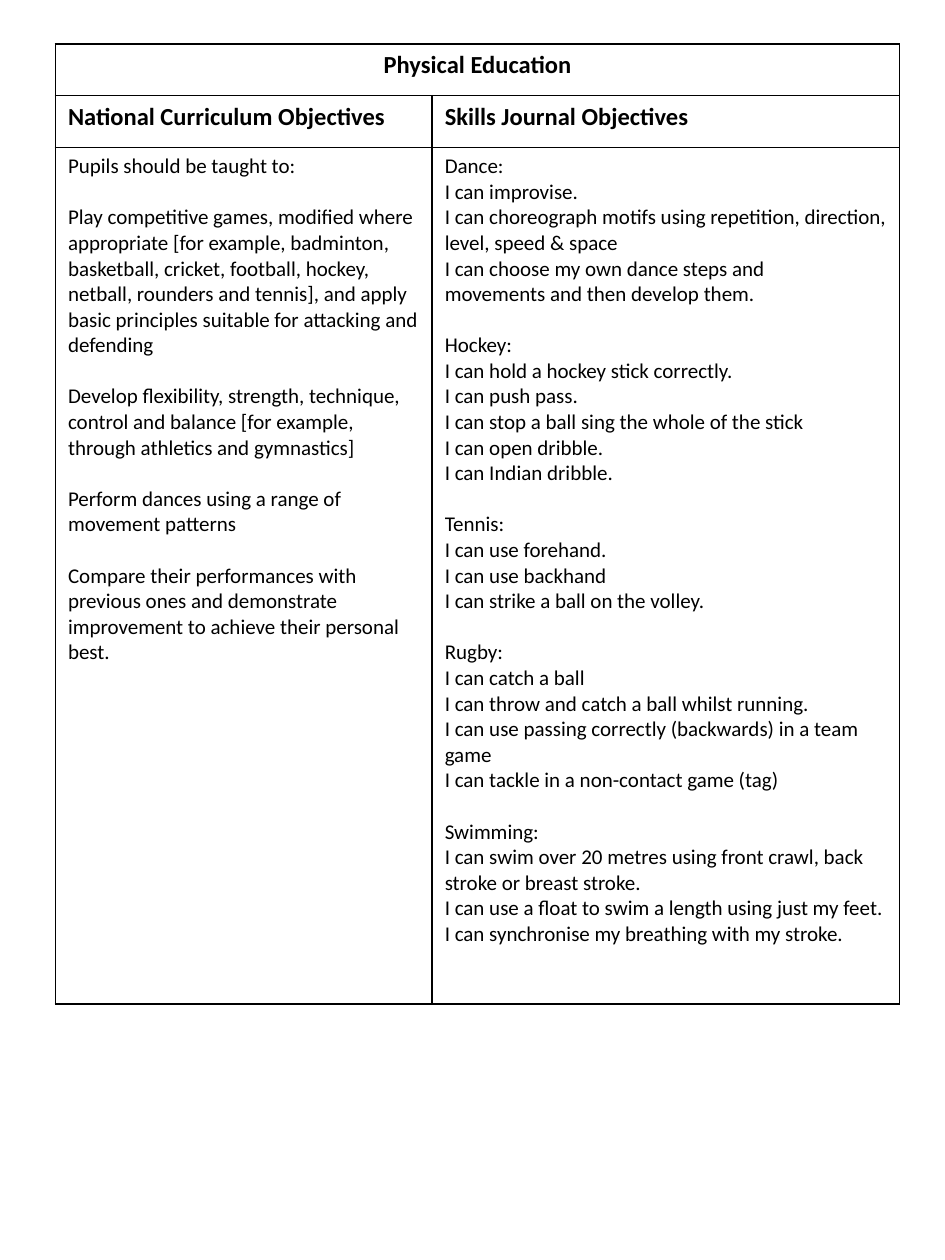
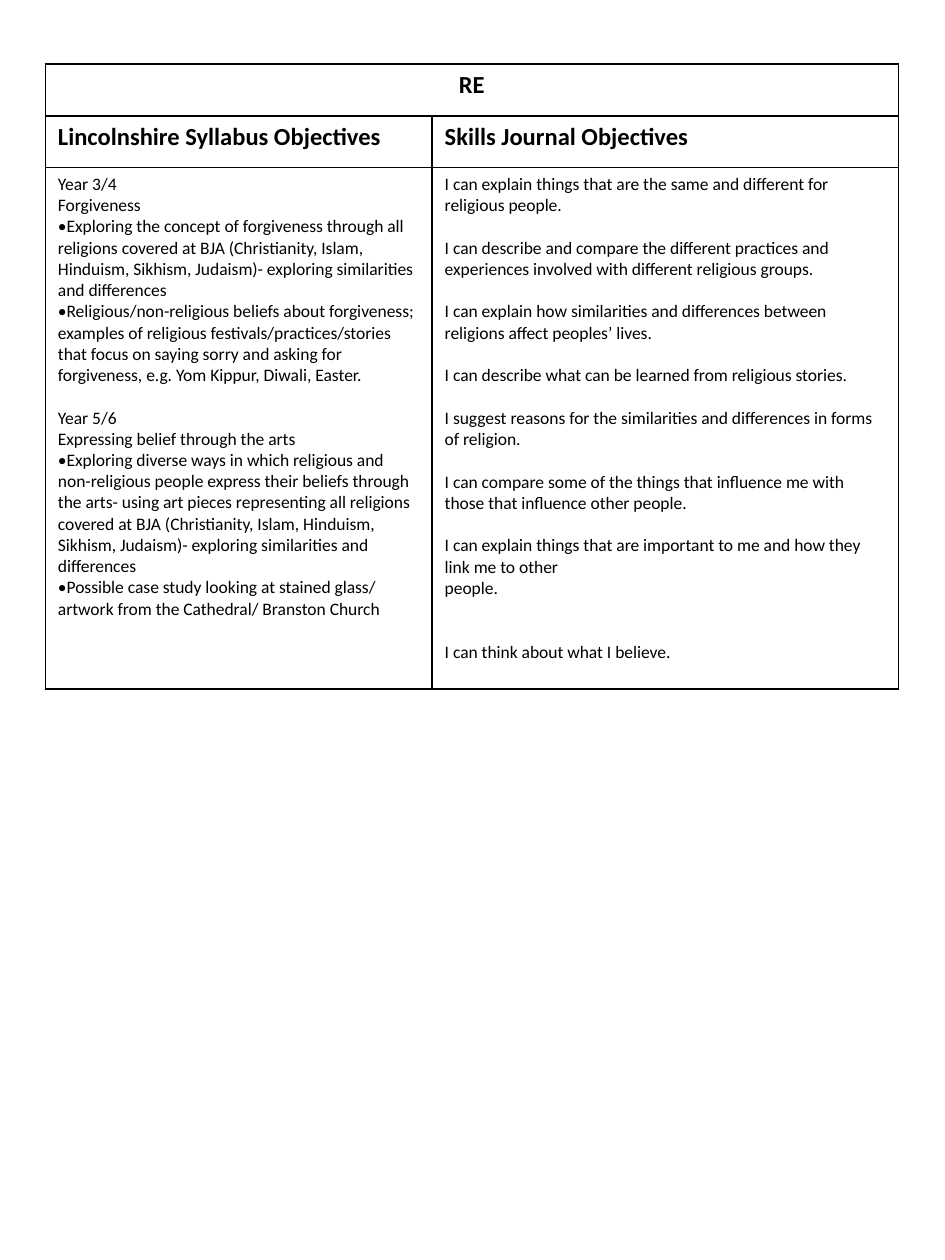
"""Build two curriculum objective tables, one subject per slide."""
from dataclasses import dataclass

import lxml.etree
import pptx
import pptx.dml.color
import pptx.enum.text
import pptx.oxml.ns
import pptx.presentation
import pptx.table
import pptx.text.text
import pptx.util
from pptx.util import Inches

BLACK = pptx.dml.color.RGBColor(0x00, 0x00, 0x00)
WHITE = pptx.dml.color.RGBColor(0xFF, 0xFF, 0xFF)
FONT_NAME = "Calibri"
HEADING_SIZE = 14
LINE_HEIGHT = 1.22
BORDER_WIDTH = pptx.util.Pt(1)
HEADING_HEIGHT = Inches(0.41)
BLANK_LAYOUT = 6

Groups = tuple[tuple[str, ...], ...]


@dataclass(frozen=True)
class Column:
    """A headed column whose groups of lines are one blank line apart."""

    heading: str
    width: pptx.util.Length
    groups: Groups


@dataclass(frozen=True)
class Subject:
    """A school subject and the table that lists its objectives."""

    title: str
    left: pptx.util.Length
    top: pptx.util.Length
    body_height: pptx.util.Length
    body_size: int
    columns: tuple[Column, ...]


PHYSICAL_EDUCATION = Subject(
    "Physical Education", Inches(0.44), Inches(0.35), Inches(6.8), 12,
    (
        Column("National Curriculum Objectives", Inches(2.99), (
            ("Pupils should be taught to:",),
            ("Play competitive games, modified where appropriate [for example, "
             "badminton, basketball, cricket, football, hockey, netball, rounders "
             "and tennis], and apply basic principles suitable for attacking and "
             "defending",),
            ("Develop flexibility, strength, technique, control and balance "
             "[for example, through athletics and gymnastics]",),
            ("Perform dances using a range of movement patterns",),
            ("Compare their performances with previous ones and demonstrate "
             "improvement to achieve their personal best.",),
        )),
        Column("Skills Journal Objectives", Inches(3.71), (
            ("Dance:",
             "I can improvise.",
             "I can choreograph motifs using repetition, direction, level, "
             "speed & space",
             "I can choose my own dance steps and",
             "movements and then develop them."),
            ("Hockey:",
             "I can hold a hockey stick correctly.",
             "I can push pass.",
             "I can stop a ball sing the whole of the stick",
             "I can open dribble.",
             "I can Indian dribble."),
            ("Tennis:",
             "I can use forehand.",
             "I can use backhand",
             "I can strike a ball on the volley."),
            ("Rugby:",
             "I can catch a ball",
             "I can throw and catch a ball whilst running.",
             "I can use passing correctly (backwards) in a team game",
             "I can tackle in a non-contact game (tag)"),
            ("Swimming:",
             "I can swim over 20 metres using front crawl, back",
             "stroke or breast stroke.",
             "I can use a float to swim a length using just my feet.",
             "I can synchronise my breathing with my stroke."),
        )),
    ),
)

RELIGIOUS_EDUCATION = Subject(
    "RE", Inches(0.36), Inches(0.51), Inches(4.14), 10,
    (
        Column("Lincolnshire Syllabus Objectives", Inches(3.07), (
            ("Year 3/4",
             "Forgiveness",
             "•Exploring the concept of forgiveness through all religions covered "
             "at BJA (Christianity, Islam, Hinduism, Sikhism, Judaism)- exploring "
             "similarities and differences",
             "•Religious/non-religious beliefs about forgiveness; examples of "
             "religious festivals/practices/stories that focus on saying sorry and "
             "asking for forgiveness, e.g. Yom Kippur, Diwali, Easter."),
            ("Year 5/6",
             "Expressing belief through the arts",
             "•Exploring diverse ways in which religious and non-religious people "
             "express their beliefs through the arts- using art pieces representing "
             "all religions covered at BJA (Christianity, Islam, Hinduism, Sikhism, "
             "Judaism)- exploring similarities and differences",
             "•Possible case study looking at stained glass/ artwork from the "
             "Cathedral/ Branston Church"),
        )),
        Column("Skills Journal Objectives", Inches(3.7), (
            ("I can explain things that are the same and different for religious "
             "people.",),
            ("I can describe and compare the different practices and experiences "
             "involved with different religious groups.",),
            ("I can explain how similarities and differences between religions "
             "affect peoples’ lives.",),
            ("I can describe what can be learned from religious stories.",),
            ("I suggest reasons for the similarities and differences in forms of "
             "religion.",),
            ("I can compare some of the things that influence me with those that "
             "influence other people.",),
            ("I can explain things that are important to me and how they link me "
             "to other",
             "people."),
            (),
            ("I can think about what I believe.",),
        )),
    ),
)


def write_text(paragraph: pptx.text.text._Paragraph, text: str, *, size: int,
               bold: bool = False, centred: bool = False, lines_before: int = 0) -> None:
    """Put formatted text in a paragraph, with a gap of whole lines above it."""
    run = paragraph.add_run()
    run.text = text
    run.font.name = FONT_NAME
    run.font.size = pptx.util.Pt(size)
    run.font.bold = bold
    run.font.color.rgb = BLACK
    paragraph.space_before = pptx.util.Pt(lines_before * size * LINE_HEIGHT)
    if centred:
        paragraph.alignment = pptx.enum.text.PP_ALIGN.CENTER


def write_groups(cell: pptx.table._Cell, groups: Groups, size: int) -> None:
    """Write every line of the groups as a paragraph of the cell."""
    paragraph = cell.text_frame.paragraphs[0]
    lines_before = 0
    for group in groups:
        for line in group:
            if paragraph.runs:
                paragraph = cell.text_frame.add_paragraph()
            write_text(paragraph, line, size=size, lines_before=lines_before)
            lines_before = 0
        lines_before += 1


def style_cell(cell: pptx.table._Cell) -> None:
    """Give a cell a white fill and a black border on all four sides."""
    cell.fill.solid()
    cell.fill.fore_color.rgb = WHITE
    properties = cell._tc.get_or_add_tcPr()
    qualify = pptx.oxml.ns.qn
    for position, side in enumerate(("a:lnL", "a:lnR", "a:lnT", "a:lnB")):
        border = lxml.etree.Element(qualify(side), w=str(BORDER_WIDTH))
        fill = lxml.etree.SubElement(border, qualify("a:solidFill"))
        lxml.etree.SubElement(fill, qualify("a:srgbClr"), val=str(BLACK))
        properties.insert(position, border)


def add_subject_slide(presentation: pptx.presentation.Presentation,
                      subject: Subject) -> None:
    """Add a slide with the objectives table of one subject."""
    slide = presentation.slides.add_slide(presentation.slide_layouts[BLANK_LAYOUT])
    row_heights = (HEADING_HEIGHT, HEADING_HEIGHT, subject.body_height)
    table = slide.shapes.add_table(
        len(row_heights), len(subject.columns), subject.left, subject.top,
        sum(column.width for column in subject.columns), sum(row_heights),
    ).table
    table.first_row = False
    table.horz_banding = False
    for row, height in zip(table.rows, row_heights):
        row.height = height

    title_cell = table.cell(0, 0)
    title_cell.merge(table.cell(0, len(subject.columns) - 1))
    write_text(title_cell.text_frame.paragraphs[0], subject.title,
               size=HEADING_SIZE, bold=True, centred=True)
    for index, column in enumerate(subject.columns):
        table.columns[index].width = column.width
        write_text(table.cell(1, index).text_frame.paragraphs[0], column.heading,
                   size=HEADING_SIZE, bold=True)
        write_groups(table.cell(2, index), column.groups, subject.body_size)
    for cell in table.iter_cells():
        style_cell(cell)


def main() -> None:
    """Build and save the presentation."""
    presentation = pptx.Presentation()
    presentation.slide_width = Inches(7.5)
    presentation.slide_height = Inches(10)
    for subject in (PHYSICAL_EDUCATION, RELIGIOUS_EDUCATION):
        add_subject_slide(presentation, subject)
    presentation.save("out.pptx")


if __name__ == "__main__":
    main()
